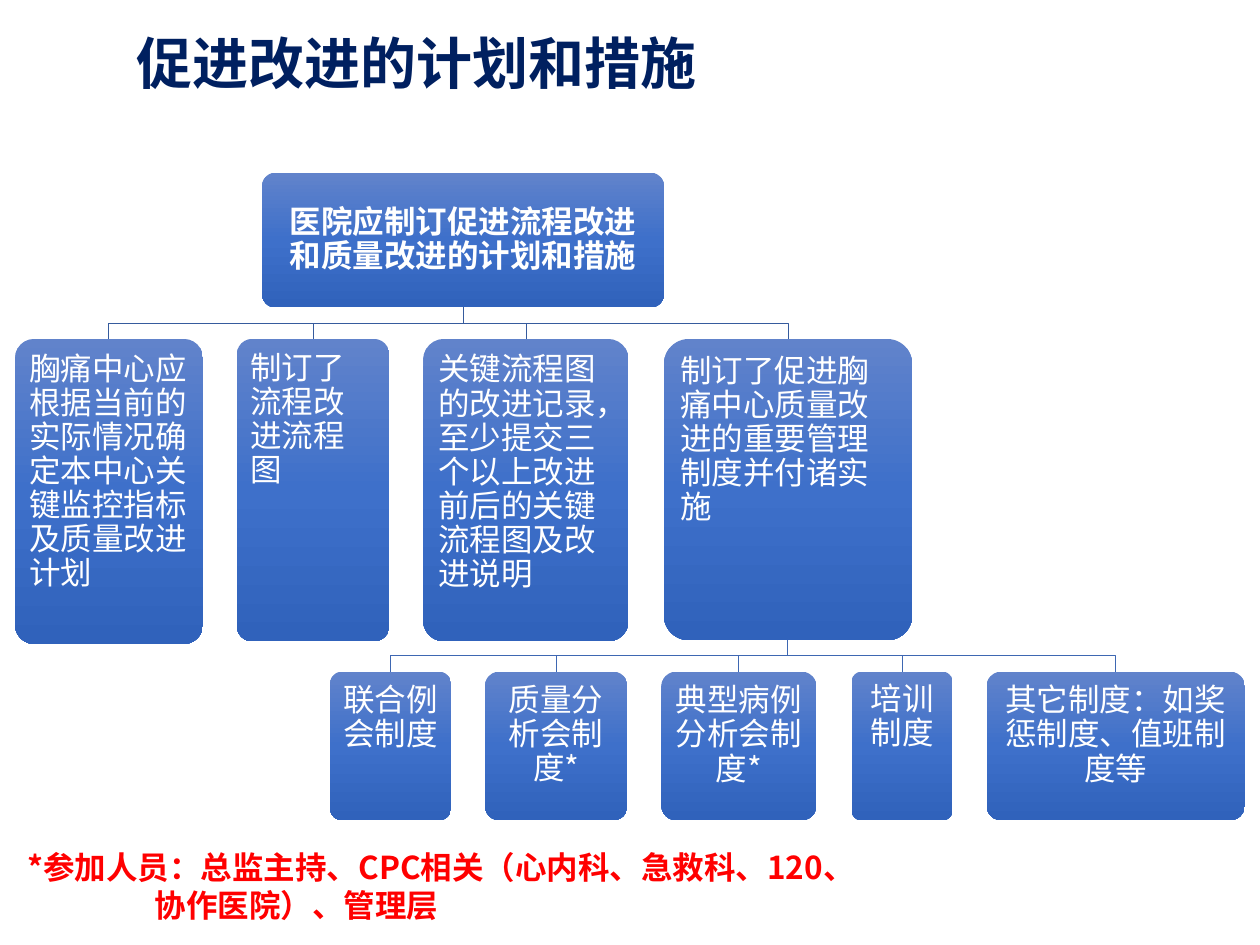
import copy

import pptx
import pptx.util
from pptx.dml.color import RGBColor
from pptx.enum.shapes import MSO_SHAPE
from pptx.enum.text import MSO_ANCHOR, PP_ALIGN
from pptx.oxml.ns import qn
from pptx.util import Inches

FONT = "Noto Sans CJK SC"
NAVY = RGBColor(0x00, 0x20, 0x60)
RED = RGBColor(0xFF, 0x00, 0x00)
WHITE = RGBColor(0xFF, 0xFF, 0xFF)
UPPER_LINE = RGBColor(0x36, 0x5B, 0x9D)
LOWER_LINE = RGBColor(0x3E, 0x67, 0xB2)
BOX_GRADIENT = [
    (0, RGBColor(0x61, 0x83, 0xCB)),
    (0.5, RGBColor(0x3E, 0x70, 0xCA)),
    (1, RGBColor(0x30, 0x62, 0xBB)),
]


def write(para, text, size, color, bold, left=0, first=0):
    """Fill a paragraph with one run, indented by left and first (inches)."""
    properties = para._p.get_or_add_pPr()
    properties.set("marL", str(Inches(left)))
    properties.set("indent", str(Inches(first)))
    span = para.add_run()
    span.text = text
    look = {"name": FONT, "size": pptx.util.Pt(size), "bold": bold}
    for name, value in look.items():
        setattr(span.font, name, value)
    span.font.color.rgb = color
    east_asian = span._r.get_or_add_rPr().makeelement(qn("a:ea"), {"typeface": FONT})
    span.font._element.find(qn("a:latin")).addnext(east_asian)


def add_box(page, text, left, top, width, height, align, anchor, bold):
    box = page.shapes.add_shape(
        MSO_SHAPE.ROUNDED_RECTANGLE,
        Inches(left), Inches(top), Inches(width), Inches(height),
    )
    box.adjustments[0] = 0.1
    box.shadow.inherit = False
    box.line.fill.background()
    box.fill.gradient()
    box.fill.gradient_angle = 270
    stops = box._element.spPr.find(".//" + qn("a:gsLst"))
    stops.insert(1, copy.deepcopy(stops[0]))
    for stop, (position, color) in zip(box.fill.gradient_stops, BOX_GRADIENT):
        stop.position = position
        stop.color.rgb = color
    frame = box.text_frame
    frame.word_wrap = True
    frame.vertical_anchor = anchor
    for side in ("left", "top", "right", "bottom"):
        setattr(frame, "margin_" + side, Inches(0.07))
    para = frame.paragraphs[0]
    para.alignment = align
    para.line_spacing = 0.9
    write(para, text, 18, WHITE, bold)


deck = pptx.Presentation()
deck.slide_width, deck.slide_height = Inches(10), Inches(7.5)
page = deck.slides.add_slide(deck.slide_layouts[5])

title = page.shapes.title
title.left, title.top = Inches(0.98), Inches(0.15)
title.width, title.height = Inches(8.2), Inches(0.76)
title.text_frame.vertical_anchor = MSO_ANCHOR.MIDDLE
heading = title.text_frame.paragraphs[0]
heading.alignment = PP_ALIGN.LEFT
heading.line_spacing = 0.9
write(heading, "促进改进的计划和措施", 32, NAVY, True, 0.38, -0.38)

# Each row: parent centre, parent bottom, row top, line colour, alignment,
# and its boxes as text, left, width, height
rows = [
    (3.68, 2.44, 2.69, UPPER_LINE, PP_ALIGN.LEFT, [
        ("胸痛中心应根据当前的实际情况确定本中心关键监控指标及质量改进计划", 0.12, 1.49, 2.42),
        ("制订了流程改进流程图", 1.88, 1.21, 2.4),
        ("关键流程图的改进记录，至少提交三个以上改进前后的关键流程图及改进说明", 3.36, 1.63, 2.4),
        ("制订了促进胸痛中心质量改进的重要管理制度并付诸实施", 5.27, 1.97, 2.39),
    ]),
    (6.25, 5.08, 5.33, LOWER_LINE, PP_ALIGN.CENTER, [
        ("联合例会制度", 2.62, 0.96, 1.18),
        ("质量分析会制度*", 3.85, 1.13, 1.18),
        ("典型病例分析会制度*", 5.25, 1.23, 1.18),
        ("培训制度", 6.76, 0.8, 1.18),
        ("其它制度：如奖惩制度、值班制度等", 7.83, 2.05, 1.18),
    ]),
]

add_box(page, "医院应制订促进流程改进和质量改进的计划和措施",
        2.08, 1.37, 3.19, 1.07, PP_ALIGN.CENTER, MSO_ANCHOR.MIDDLE, True)

for parent_x, parent_bottom, top, line_color, align, boxes in rows:
    bend = (parent_bottom + top) / 2
    for text, left, width, height in boxes:
        centre = left + width / 2
        elbow = page.shapes.build_freeform(Inches(parent_x), Inches(parent_bottom))
        corners = [(parent_x, bend), (centre, bend), (centre, top)]
        elbow.add_line_segments([(Inches(x), Inches(y)) for x, y in corners], close=False)
        branch = elbow.convert_to_shape()
        branch.shadow.inherit = False
        branch.fill.background()
        branch.line.color.rgb = line_color
        branch.line.width = pptx.util.Pt(0.5)
        add_box(page, text, left, top, width, height, align, MSO_ANCHOR.TOP, False)

footnote = page.shapes.add_textbox(Inches(0.12), Inches(6.68), Inches(10), Inches(0.77))
frame = footnote.text_frame
frame.word_wrap = True
write(frame.paragraphs[0], "*参加人员：总监主持、CPC相关（心内科、急救科、120、", 18, RED, True, 0.38, -0.38)
write(frame.add_paragraph(), "协作医院）、管理层", 18, RED, True, 1.01)

deck.save("out.pptx")
